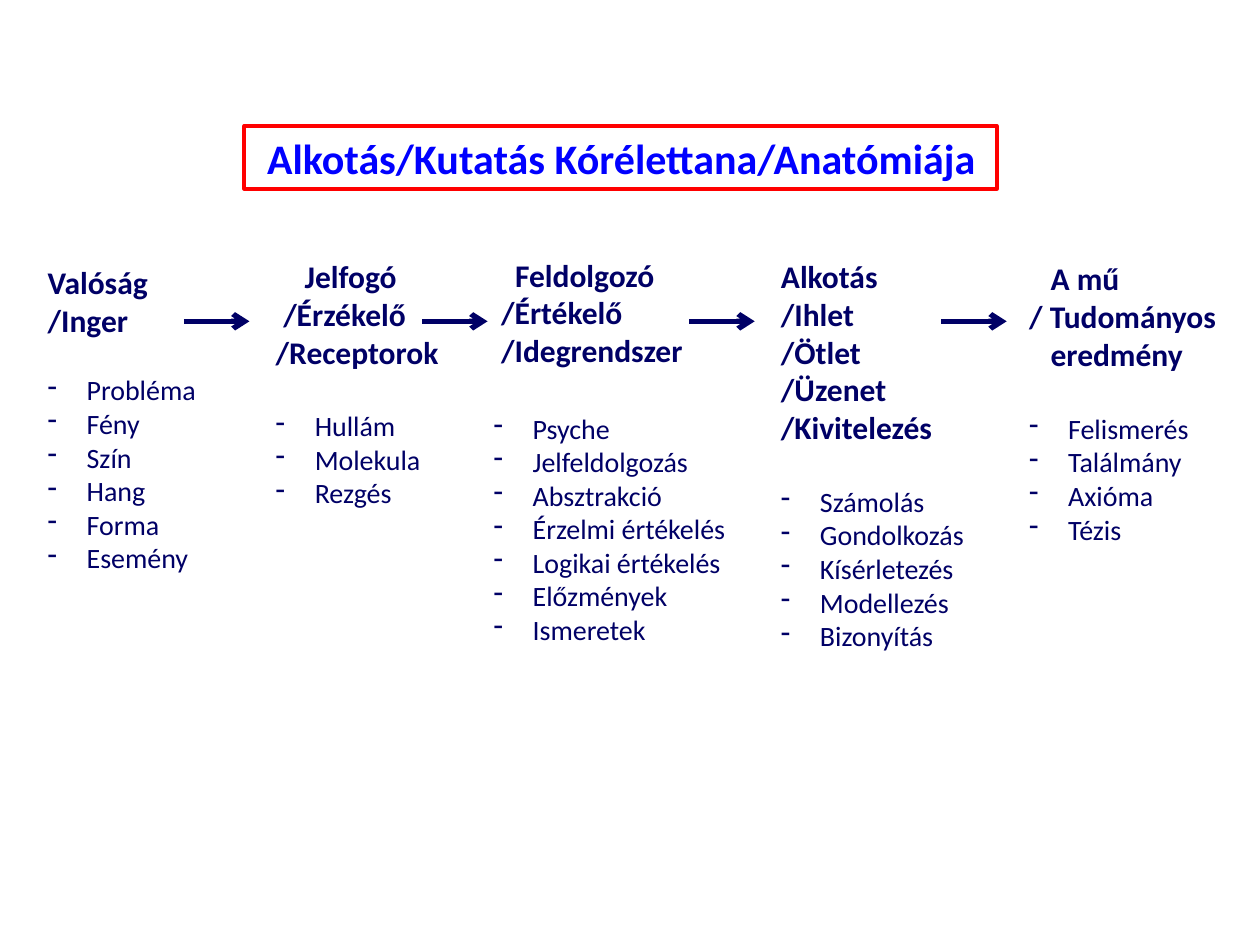
import pptx
import pptx.util
import pptx.dml.color
import pptx.enum.shapes
import pptx.enum.text
import pptx.oxml.ns
from lxml import etree

Inches, Pt = pptx.util.Inches, pptx.util.Pt
RGB = pptx.dml.color.RGBColor
NAVY = RGB(0x00, 0x00, 0x66)
BLUE = RGB(0x00, 0x00, 0xFF)
RED = RGB(0xFF, 0x00, 0x00)
FONT = "Calibri"
HANG = 0.31

TITLE = "Alkotás/Kutatás Kórélettana/Anatómiája"

# box (left, top, width, height), gap above list in points,
# heading lines with their indent, list items
STAGES = [
    ((0.28, 2.04, 1.39, 2.59), 19.5,
     [("Valóság", 0), ("/Inger", 0)],
     ["Probléma", "Fény", "Szín", "Hang", "Forma", "Esemény"]),
    ((2.09, 1.99, 1.5, 2.83), 22,
     [("Jelfogó", 0.23), ("/Érzékelő", 0.06), ("/Receptorok", 0)],
     ["Hullám", "Molekula", "Rezgés"]),
    ((3.82, 1.98, 2.07, 3.23), 24,
     [("Feldolgozó", 0.17), ("/Értékelő", 0.06), ("/Idegrendszer", 0.06)],
     ["Psyche", "Jelfeldolgozás", "Absztrakció", "Érzelmi értékelés",
      "Logikai értékelés", "Előzmények", "Ismeretek"]),
    ((6.1, 1.99, 1.67, 3.8), 22,
     [("Alkotás", 0), ("/Ihlet", 0), ("/Ötlet", 0), ("/Üzenet", 0),
      ("/Kivitelezés", 0)],
     ["Számolás", "Gondolkozás", "Kísérletezés", "Modellezés",
      "Bizonyítás"]),
    ((8.07, 2.01, 1.7, 3.26), 22,
     [("A mű", 0.17), ("/ Tudományos", 0), ("eredmény", 0.17)],
     ["Felismerés", "Találmány", "Axióma", "Tézis"]),
]

ARROWS = [1.46, 3.35, 5.47, 7.47]
ARROW_Y, ARROW_LEN = 2.55, 0.52


def add_sub(node, tag, **attrs):
    return etree.SubElement(node, pptx.oxml.ns.qn(tag), attrs)


def write(para, text, size, color, bold, left=0, hang=0):
    para.alignment = pptx.enum.text.PP_ALIGN.LEFT
    props = para._p.get_or_add_pPr()
    props.set("marL", str(Inches(left)))
    props.set("indent", str(-Inches(hang)))
    run = para.add_run()
    run.text = text
    font = run.font
    font.name, font.size, font.bold = FONT, Pt(size), bold
    font.color.rgb = color


def fit(frame):
    """Wrap the text, leaving no right inset so tight lines stay whole."""
    frame.word_wrap = True
    frame.margin_right = 0
    frame.auto_size = pptx.enum.text.MSO_AUTO_SIZE.NONE


def add_stage(slide, box, gap, heads, items):
    frame = slide.shapes.add_textbox(*map(Inches, box)).text_frame
    fit(frame)
    for i, (text, left) in enumerate(heads):
        para = frame.add_paragraph() if i else frame.paragraphs[0]
        write(para, text, 18, NAVY, True, left)
    for i, text in enumerate(items):
        para = frame.add_paragraph()
        para.space_before = Pt(0 if i else gap)
        write(para, text, 16, NAVY, False, HANG, HANG)
        add_sub(para._p.get_or_add_pPr(), "a:buChar", char="-")


def add_title(slide):
    title = slide.shapes.title
    title.left, title.top = Inches(1.94), Inches(1)
    title.width, title.height = Inches(5.97), Inches(0.5)
    title.line.color.rgb = RED
    title.line.width = Pt(2.25)
    fit(title.text_frame)
    write(title.text_frame.paragraphs[0], TITLE, 24, BLUE, True, 0.08)


def add_arrow(slide, left):
    y = Inches(ARROW_Y)
    line = slide.shapes.add_connector(
        pptx.enum.shapes.MSO_CONNECTOR.STRAIGHT,
        Inches(left), y, Inches(left + ARROW_LEN), y)
    line.line.color.rgb = NAVY
    line.line.width = Pt(3)
    add_sub(line.line._get_or_add_ln(), "a:tailEnd", type="arrow")
    add_sub(line._element.spPr, "a:effectLst")


def main():
    deck = pptx.Presentation()
    deck.slide_width, deck.slide_height = Inches(10), Inches(7.5)
    slide = deck.slides.add_slide(deck.slide_layouts[5])
    add_title(slide)
    for stage in STAGES:
        add_stage(slide, *stage)
    for left in ARROWS:
        add_arrow(slide, left)
    deck.save("out.pptx")


if __name__ == "__main__":
    main()
